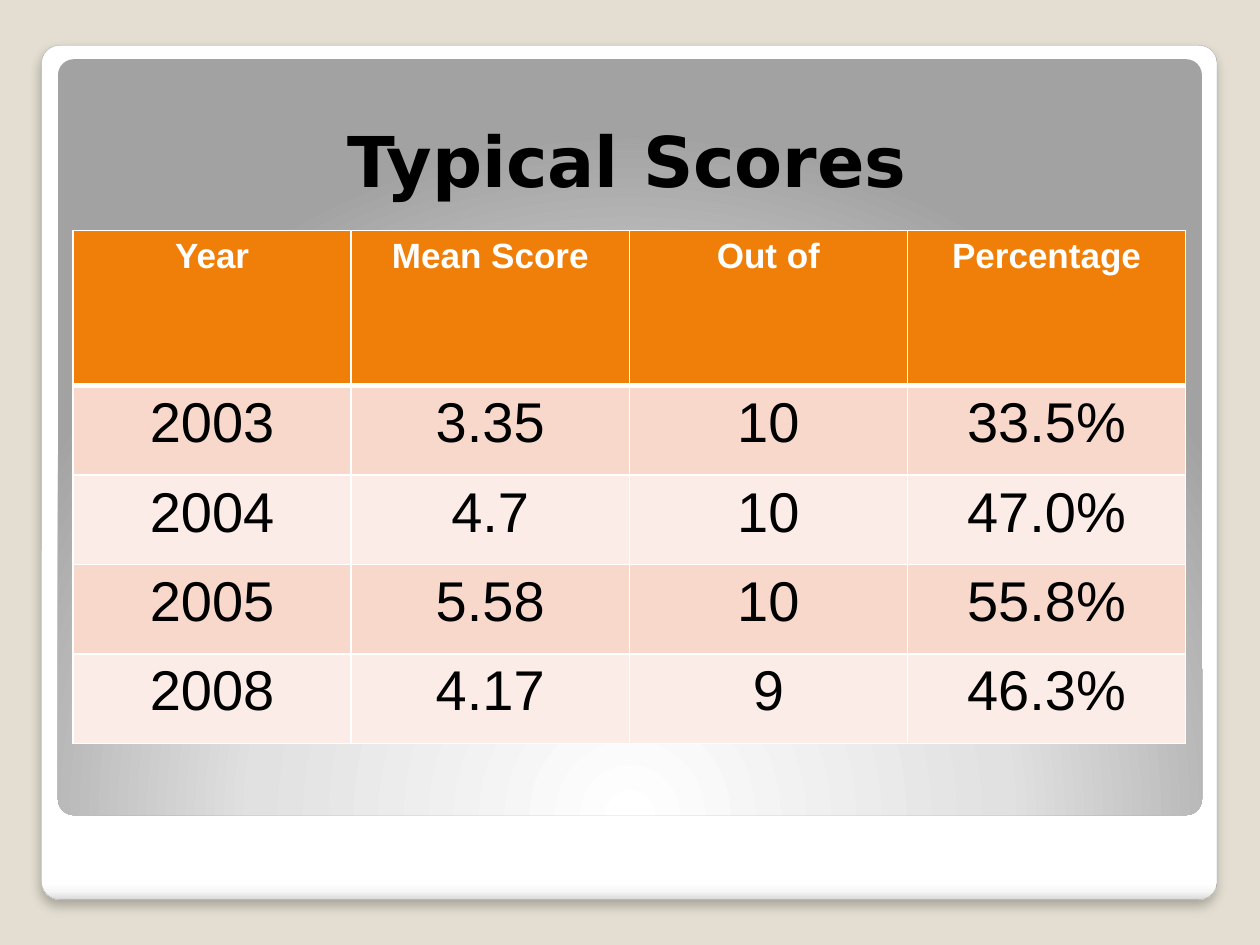
import pptx
import pptx.dml.color
import pptx.enum.shapes
import pptx.enum.text
import pptx.oxml
import pptx.oxml.ns
import pptx.util

TITLE = "Typical Scores"
SCORES = [
    ("Year", "Mean Score", "Out of", "Percentage"),
    ("2003", "3.35", "10", "33.5%"),
    ("2004", "4.7", "10", "47.0%"),
    ("2005", "5.58", "10", "55.8%"),
    ("2008", "4.17", "9", "46.3%"),
]

THEME = {
    "background": "E3DED1",
    "frame_stops": [(0, "FFFFFF"), (98, "FFFFFF"), (99, "F7F7F7"), (100, "DADADA")],
    "panel_stops": [(0, "FFFFFF"), (55, "E1E1E1"), (100, "A2A2A2")],
    "frame_line": "A4A4A4",
    "shadow": "000000",
    "text": "000000",
    "header_text": "FFFFFF",
    "header_fill": "F07F09",
    "bands": ("F9D8CC", "FCECE7"),
    "border": "FFFFFF",
    "title_font": "DejaVu Sans",
    "table_font": "Arial",
    "title_size": 40,
    "header_size": 20,
    "body_size": 32,
}

# left, top, width, height in inches
FRAME = (0.33, 0.36, 9.33, 6.78)
PANEL = (0.46, 0.47, 9.08, 6)
TITLE_BOX = (0.5, 0.5, 8.95, 1.15)
TABLE = (0.58, 1.83, 8.83, 4.07)
HEADER_HEIGHT = 1.23
CORNER = 0.021

LINEAR_DOWN = '<a:lin ang="5400000" scaled="0"/>'
GLOW_FROM_BELOW = (
    '<a:path path="circle"><a:fillToRect l="50000" t="175000" r="50000" b="-75000"/></a:path>'
)


def inches(box):
    return [pptx.util.Inches(length) for length in box]


def rgb(color):
    return pptx.dml.color.RGBColor.from_string(color)


def drawing_xml(markup):
    """Parse one element, declaring the drawing namespace on its tag."""
    tag, rest = markup.split(" ", 1)
    return pptx.oxml.parse_xml(f"{tag} {pptx.oxml.ns.nsdecls('a')} {rest}")


def style_text(text_frame, font_name, size, color, bold):
    paragraph = text_frame.paragraphs[0]
    paragraph.alignment = pptx.enum.text.PP_ALIGN.CENTER
    font = paragraph.runs[0].font
    font.name, font.size, font.bold = font_name, pptx.util.Pt(size), bold
    font.color.rgb = rgb(color)


def add_rounded_panel(slide, box, stops, direction):
    panel = slide.shapes.add_shape(
        pptx.enum.shapes.MSO_SHAPE.ROUNDED_RECTANGLE, *inches(box))
    panel.adjustments[0] = CORNER
    panel.shadow.inherit = False
    panel.line.fill.background()
    panel.fill.background()
    stop_xml = "".join(
        f'<a:gs pos="{share * 1000}"><a:srgbClr val="{color}"/></a:gs>'
        for share, color in stops)
    gradient = drawing_xml(
        f'<a:gradFill rotWithShape="1"><a:gsLst>{stop_xml}</a:gsLst>{direction}</a:gradFill>')
    properties = panel.element.spPr
    properties.replace(properties.find(pptx.oxml.ns.qn("a:noFill")), gradient)
    return panel


def add_frame(slide):
    frame = add_rounded_panel(slide, FRAME, THEME["frame_stops"], LINEAR_DOWN)
    frame.line.color.rgb = rgb(THEME["frame_line"])
    frame.line.width = pptx.util.Pt(0.16)
    effects = frame.element.spPr.find(pptx.oxml.ns.qn("a:effectLst"))
    effects.append(drawing_xml(
        f'<a:outerShdw blurRad="{pptx.util.Pt(6)}" dist="{pptx.util.Pt(4)}" dir="5400000" '
        f'algn="t" rotWithShape="0"><a:srgbClr val="{THEME["shadow"]}">'
        '<a:alpha val="25000"/></a:srgbClr></a:outerShdw>'))


def add_title(slide):
    title = slide.shapes.add_textbox(*inches(TITLE_BOX)).text_frame
    title.word_wrap = True
    title.vertical_anchor = pptx.enum.text.MSO_ANCHOR.BOTTOM
    title.text = TITLE
    style_text(title, THEME["title_font"], THEME["title_size"], THEME["text"], True)


def set_borders(cell, widths):
    properties = cell._tc.get_or_add_tcPr()
    for position, (side, width) in enumerate(widths.items()):
        properties.insert(position, drawing_xml(
            f'<a:ln{side} w="{pptx.util.Pt(width)}"><a:solidFill>'
            f'<a:srgbClr val="{THEME["border"]}"/></a:solidFill></a:ln{side}>'))


def add_scores(slide):
    table = slide.shapes.add_table(len(SCORES), len(SCORES[0]), *inches(TABLE)).table
    body_height = (TABLE[3] - HEADER_HEIGHT) / (len(SCORES) - 1)
    for column in table.columns:
        column.width = pptx.util.Inches(TABLE[2] / len(SCORES[0]))
    for r, values in enumerate(SCORES):
        is_header = r == 0
        table.rows[r].height = pptx.util.Inches(HEADER_HEIGHT if is_header else body_height)
        fill = THEME["header_fill"] if is_header else THEME["bands"][(r - 1) % 2]
        size = THEME["header_size" if is_header else "body_size"]
        color = THEME["header_text" if is_header else "text"]
        widths = {"L": 1, "R": 1, "T": 3 if r == 1 else 1, "B": 3 if is_header else 1}
        for c, value in enumerate(values):
            cell = table.cell(r, c)
            cell.text_frame.text = value
            style_text(cell.text_frame, THEME["table_font"], size, color, is_header)
            cell.fill.solid()
            cell.fill.fore_color.rgb = rgb(fill)
            set_borders(cell, widths)


def main():
    deck = pptx.Presentation()
    deck.slide_width, deck.slide_height = inches((10, 7.5))
    slide = deck.slides.add_slide(deck.slide_layouts[6])
    slide.background.fill.solid()
    slide.background.fill.fore_color.rgb = rgb(THEME["background"])
    add_frame(slide)
    add_rounded_panel(slide, PANEL, THEME["panel_stops"], GLOW_FROM_BELOW)
    add_title(slide)
    add_scores(slide)
    deck.save("out.pptx")


if __name__ == "__main__":
    main()
